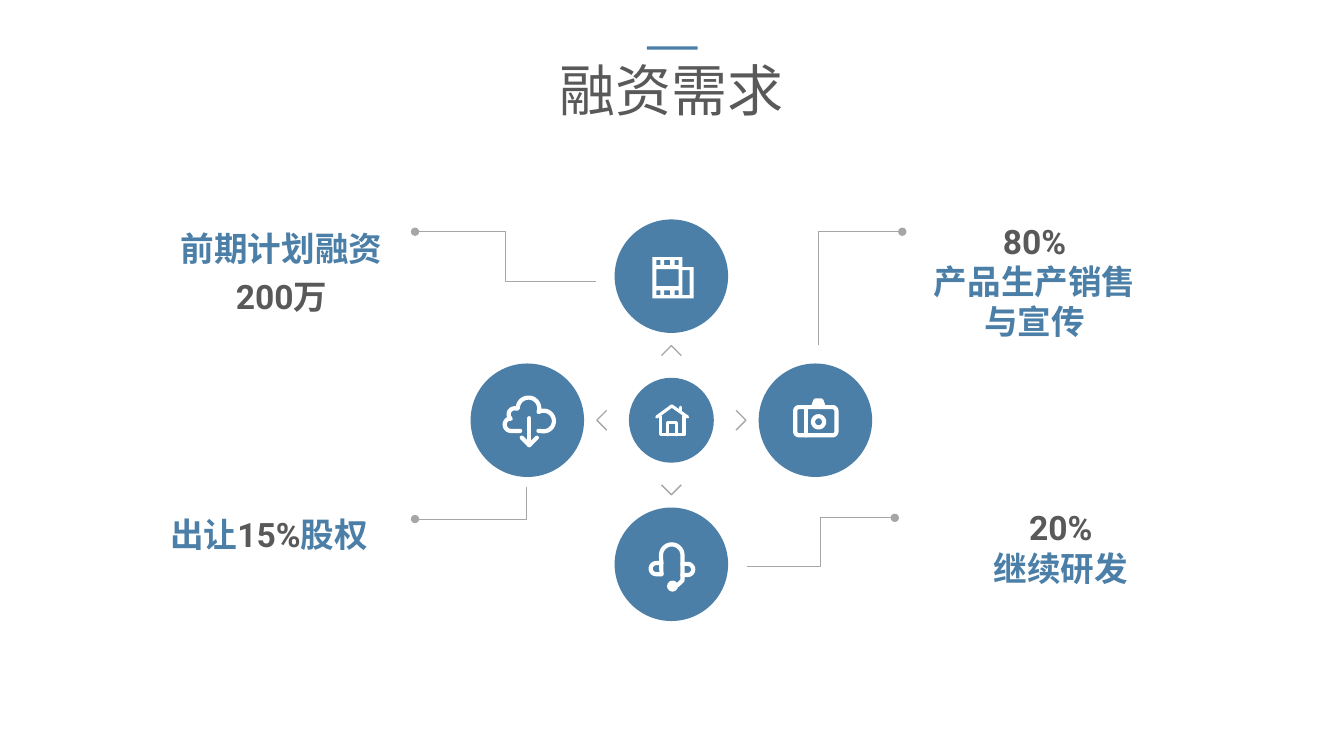
from math import cos, radians, sin

from lxml import etree
from pptx import Presentation
from pptx.dml.color import RGBColor
from pptx.enum.shapes import MSO_SHAPE
from pptx.enum.text import MSO_ANCHOR, MSO_AUTO_SIZE, PP_ALIGN
from pptx.oxml.ns import qn
from pptx.util import Cm, Pt

BLUE, DARK, GREY, WHITE = "4B7FA7", "595959", "A6A6A6", "FFFFFF"


def rgb(code):
    return RGBColor.from_string(code)


def trace(contours, origin=(0, 0), line=None, width=0.75, fill=None, closed=False):
    """Draw contours in cm; an entry (x, y, radius, start, end) is an arc in degrees."""
    builder = None
    for contour in contours:
        points = []
        for x, y, *arc in contour:
            if arc:
                radius, start, end = arc
                angles = [radians(start + (end - start) * i / 24) for i in range(25)]
                points += [(x + radius * cos(a), y + radius * sin(a)) for a in angles]
            else:
                points.append((x, y))
        points = [(Cm(origin[0] + x), Cm(origin[1] + y)) for x, y in points]
        if builder is None:
            builder = slide.shapes.build_freeform(*points[0], scale=1.0)
        else:
            builder.move_to(*points[0])
        builder.add_line_segments(points[1:], close=closed)
    shape = builder.convert_to_shape()
    shape.shadow.inherit = False
    if fill:
        shape.fill.solid()
        shape.fill.fore_color.rgb = rgb(fill)
    else:
        shape.fill.background()
    if line:
        shape.line.color.rgb = rgb(line)
        shape.line.width = Pt(width)
    else:
        shape.line.fill.background()
    return shape


presentation = Presentation()
presentation.slide_width, presentation.slide_height = Cm(33.87), Cm(19.05)
slide = presentation.slides.add_slide(presentation.slide_layouts[5])

# Title
title = slide.shapes.title
title.left, title.top, title.width, title.height = Cm(13.82), Cm(1.27), Cm(6.22), Cm(1.96)
title.text_frame.text = "融资需求"
title.text_frame.word_wrap = False
title.text_frame.auto_size = MSO_AUTO_SIZE.SHAPE_TO_FIT_TEXT
title.text_frame.vertical_anchor = MSO_ANCHOR.TOP
heading = title.text_frame.paragraphs[0]
heading.alignment = PP_ALIGN.CENTER
heading.runs[0].font.size = Pt(40)
heading.runs[0].font.name = "Calibri"
heading.runs[0].font.color.rgb = rgb(DARK)

# Circles around the home circle, and the accent bar over the title
hub_x, hub_y, orbit = 16.92, 10.59, 3.63
film = (hub_x, hub_y - orbit)
camera = (hub_x + orbit, hub_y)
headset = (hub_x, hub_y + orbit)
cloud = (hub_x - orbit, hub_y)
home = (hub_x, hub_y)
microphone = (hub_x + 0.03, hub_y + orbit + 0.55)
solids = [(MSO_SHAPE.OVAL, center, 1.43, 1.43, BLUE) for center in (film, camera, headset, cloud)]
solids += [
    (MSO_SHAPE.OVAL, home, 1.07, 1.07, BLUE),
    (MSO_SHAPE.OVAL, microphone, 0.14, 0.14, WHITE),
    (MSO_SHAPE.RECTANGLE, (16.94, 1.21), 0.64, 0.04, BLUE),
]
for kind, (x, y), half_width, half_height, color in solids:
    solid = slide.shapes.add_shape(
        kind, Cm(x - half_width), Cm(y - half_height), Cm(2 * half_width), Cm(2 * half_height))
    solid.shadow.inherit = False
    solid.fill.solid()
    solid.fill.fore_color.rgb = rgb(color)
    solid.line.fill.background()

# Leader lines with a dot at the text end
leaders = [
    [(15.01, 7.09), (12.74, 7.09), (12.74, 5.84), (10.46, 5.84)],
    [(20.63, 8.69), (20.63, 5.84), (22.74, 5.84)],
    [(18.83, 14.28), (20.68, 14.28), (20.68, 13.05), (22.55, 13.05)],
    [(13.28, 12.27), (13.28, 13.08), (10.46, 13.08)],
]
for leader in leaders:
    outline = trace([leader], line=GREY).line._get_or_add_ln()
    etree.SubElement(outline, qn("a:tailEnd"), type="oval")

# Chevrons pointing away from home
for dx, dy in [(1, 0), (-1, 0), (0, 1), (0, -1)]:
    base, tip, spread = 1.63, 1.88, 0.25
    trace([[(base * dx - spread * dy, base * dy - spread * dx),
            (tip * dx, tip * dy),
            (base * dx + spread * dy, base * dy + spread * dx)]],
          home, line=GREY, width=1)

# Film icon: a solid outline with windows
windows = [(0.28, -0.15, 0.46, 0.48), (-0.38, -0.18, 0.18, 0.25)]
for left, right in [(-0.38, -0.28), (-0.18, -0.03), (0.08, 0.18)]:
    for top, bottom in [(-0.41, -0.28), (0.36, 0.48)]:
        windows.append((left, top, right, bottom))
film_outline = [(-0.48, -0.48), (0.28, -0.48), (0.28, -0.23), (0.56, -0.23),
                (0.56, 0.56), (-0.48, 0.56)]
trace([film_outline] + [[(l, t), (r, t), (r, b), (l, b)] for l, t, r, b in windows],
      film, fill=WHITE, closed=True)

# Icons drawn with round strokes: center, width, closed, fill, contours
icons = [
    (cloud, 3, False, None, [
        [(-0.18, 0.27), (-0.41, 0.11, 0.16, 90, 250), (-0.32, -0.15, 0.15, 130, 290),
         (0.03, -0.3, 0.27, 180, 375), (0.41, 0.02, 0.26, 240, 450), (0.28, 0.27)],
        [(0.05, -0.05), (0.05, 0.63)],
        [(-0.14, 0.44), (0.05, 0.63), (0.24, 0.44)]]),
    (headset, 3, False, None, [
        [(-0.25, 0.25), (0.01, -0.23, 0.27, 180, 360), (0.28, 0.41), (0.15, 0.53)],
        [(-0.25, 0.25), (-0.38, 0.11, 0.14, 90, 270), (-0.25, -0.03)],
        [(0.28, -0.01), (0.41, 0.13, 0.14, -90, 90), (0.28, 0.27)]]),
    (camera, 3, True, None, [
        [(-0.41, -0.23, 0.1, 180, 270), (0.43, -0.23, 0.1, 270, 360),
         (0.43, 0.28, 0.1, 0, 90), (-0.41, 0.28, 0.1, 90, 180)],
        [(-0.23, -0.33), (-0.23, 0.38)],
        [(0.08, 0.04, 0.14, 0, 360)]]),
    (camera, 3, True, WHITE, [[(-0.05, -0.36), (0, -0.5), (0.15, -0.5), (0.2, -0.36)]]),
    (home, 2.25, False, None, [
        [(-0.37, -0.08), (0.01, -0.36), (0.41, -0.08)],
        [(-0.27, -0.1), (-0.27, 0.37), (0.32, 0.37), (0.32, -0.1)],
        [(-0.09, 0.37), (-0.09, 0.06), (0.13, 0.06), (0.13, 0.37)],
        [(0.23, -0.33), (0.23, -0.23)]]),
]
for center, width, closed, fill, contours in icons:
    stroke = trace(contours, center, WHITE, width, fill, closed).line._get_or_add_ln()
    stroke.set("cap", "rnd")
    etree.SubElement(stroke, qn("a:round"))

# Captions: left, top, height, alignment, line spacing, paragraphs of runs
captions = [
    (23.27, 5.56, 3.07, PP_ALIGN.CENTER, None,
     [[("80%", DARK)], [("产品生产销售与宣传", BLUE)]]),
    (23.93, 12.78, 2.06, PP_ALIGN.CENTER, None,
     [[("20%", DARK)], [("继续研发", BLUE)]]),
    (4.29, 12.75, 1.22, PP_ALIGN.LEFT, 1.2,
     [[("出让", BLUE), ("15%", DARK), ("股权", BLUE)]]),
    (4.29, 5.54, 2.34, PP_ALIGN.CENTER, 1.2,
     [[("前期计划融资", BLUE), ("200万", DARK)]]),
]
for left, top, height, alignment, spacing, paragraphs in captions:
    caption = slide.shapes.add_textbox(Cm(left), Cm(top), Cm(5.61), Cm(height)).text_frame
    caption.word_wrap = True
    caption.auto_size = MSO_AUTO_SIZE.SHAPE_TO_FIT_TEXT
    caption.margin_left = caption.margin_right = caption.margin_top = caption.margin_bottom = 0
    for index, parts in enumerate(paragraphs):
        paragraph = caption.add_paragraph() if index else caption.paragraphs[0]
        paragraph.alignment = alignment
        paragraph.line_spacing = spacing
        for words, color in parts:
            run = paragraph.add_run()
            run.text = words
            run.font.size = Pt(24)
            run.font.bold = True
            run.font.name = "Roboto"
            run.font.color.rgb = rgb(color)

presentation.save("out.pptx")
